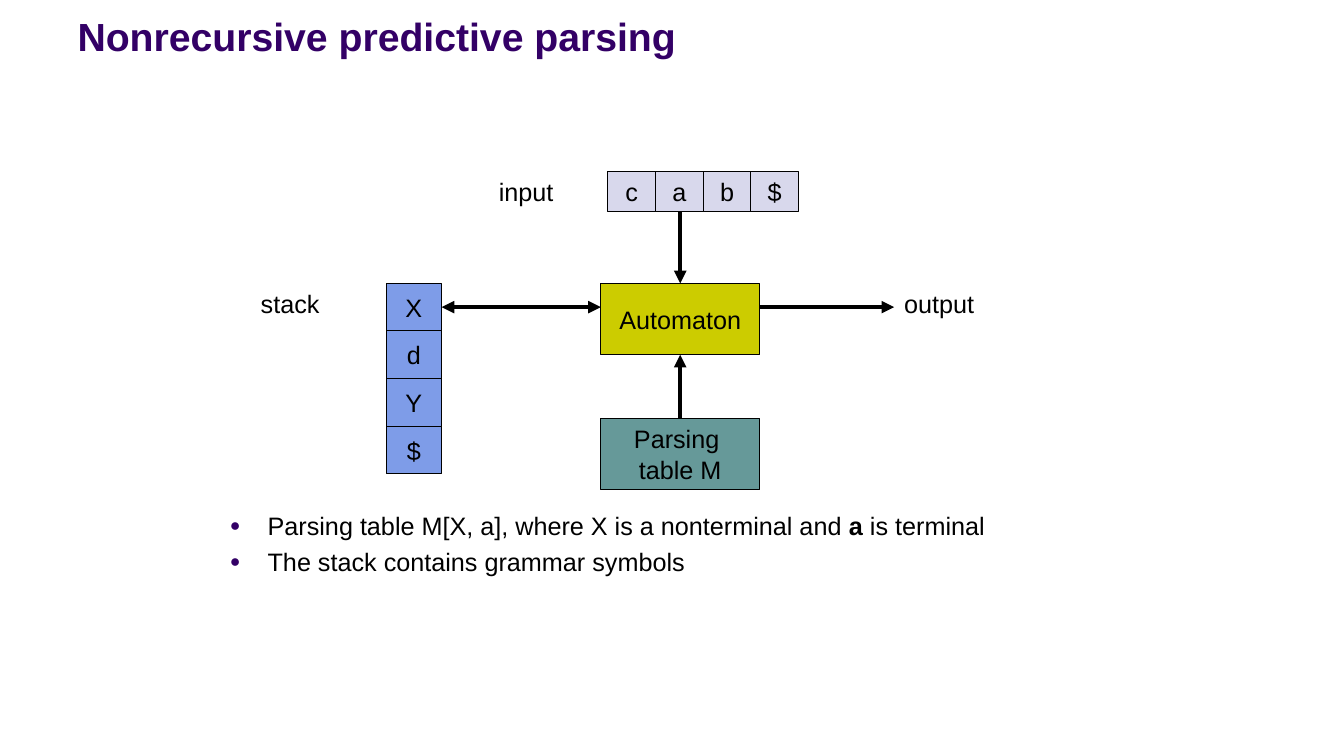
from lxml import etree
from pptx import Presentation
from pptx import util as u
from pptx.dml.color import RGBColor
from pptx.enum import shapes, text
from pptx.oxml import ns

BLACK = RGBColor(0x00, 0x00, 0x00)
PURPLE = RGBColor(0x33, 0x00, 0x66)
OLIVE = RGBColor(0xCC, 0xCC, 0x00)
TEAL = RGBColor(0x66, 0x99, 0x99)
LAVENDER = RGBColor(0xD8, 0xD8, 0xEC)
BLUE = RGBColor(0x7E, 0x9C, 0xE8)
CELL = 1.2
STACK_LEFT, STACK_WIDTH = 9.73, 1.4
BOX_LEFT, BOX_WIDTH, BOX_HEIGHT = 15.14, 4, 1.8
INPUT_LEFT, INPUT_TOP, INPUT_HEIGHT = 15.32, 4.32, 1
AUTOMATON_TOP, TABLE_TOP = 7.14, 10.54
OUTPUT_LEFT = 22.53


def add_text(p, content, size=18, color=BLACK, bold=False, align=text.PP_ALIGN.LEFT):
    p.alignment = align
    for i, line in enumerate(content.split("\n")):
        if i:
            p.add_line_break()
        r = p.add_run()
        r.text = line
        r.font.name = "Arial"
        r.font.size = u.Pt(size)
        r.font.bold = bold
        r.font.color.rgb = color


prs = Presentation()
prs.slide_width, prs.slide_height = u.Inches(13.333), u.Inches(7.5)
s = prs.slides.add_slide(prs.slide_layouts[1])

title, body = s.shapes.title, s.placeholders[1]
for sp, box, anchor in [
    (title, (1.7, 0.33, 30.48, 1.3), text.MSO_ANCHOR.BOTTOM),
    (body, (5.54, 12.73, 22.86, 4.6), text.MSO_ANCHOR.TOP),
]:
    sp.left, sp.top, sp.width, sp.height = map(u.Cm, box)
    sp.text_frame.auto_size = text.MSO_AUTO_SIZE.NONE
    sp.text_frame.vertical_anchor = anchor
add_text(title.text_frame.paragraphs[0], "Nonrecursive predictive parsing",
         size=28, color=PURPLE, bold=True)

bullets = [
    [("Parsing table M[X, a], where X is a nonterminal and ", False),
     ("a ", True), ("is terminal", False)],
    [("The stack contains grammar symbols", False)],
]
tf = body.text_frame
for i, runs in enumerate(bullets):
    p = tf.add_paragraph() if i else tf.paragraphs[0]
    for content, bold in runs:
        add_text(p, content, bold=bold)
    p.space_before = u.Pt(4)
    pPr = p._p.get_or_add_pPr()
    pPr.set("marL", str(u.Cm(0.95)))
    pPr.set("indent", str(u.Cm(-0.95)))
    color = etree.SubElement(pPr, ns.qn("a:buClr"))
    etree.SubElement(color, ns.qn("a:srgbClr"), val=str(PURPLE))
    etree.SubElement(pPr, ns.qn("a:buSzPct"), val="70000")
    etree.SubElement(pPr, ns.qn("a:buFont"), typeface="Arial")
    etree.SubElement(pPr, ns.qn("a:buChar"), char="●")

boxes = [
    ("Automaton", BOX_LEFT, AUTOMATON_TOP, BOX_WIDTH, BOX_HEIGHT, OLIVE),
    ("Parsing \ntable M", BOX_LEFT, TABLE_TOP, BOX_WIDTH, BOX_HEIGHT, TEAL),
]
for i, symbol in enumerate("cab$"):
    boxes.append((symbol, INPUT_LEFT + i * CELL, INPUT_TOP, CELL, INPUT_HEIGHT, LAVENDER))
for i, symbol in enumerate("XdY$"):
    boxes.append((symbol, STACK_LEFT, AUTOMATON_TOP + i * CELL, STACK_WIDTH, CELL, BLUE))
for content, left, top, width, height, fill in boxes:
    sp = s.shapes.add_shape(shapes.MSO_SHAPE.RECTANGLE,
                            u.Cm(left), u.Cm(top), u.Cm(width), u.Cm(height))
    sp.shadow.inherit = False
    sp.fill.solid()
    sp.fill.fore_color.rgb = fill
    sp.line.color.rgb = BLACK
    sp.line.width = u.Pt(0.75)
    tf = sp.text_frame
    tf.word_wrap = False
    tf.vertical_anchor = text.MSO_ANCHOR.MIDDLE
    add_text(tf.paragraphs[0], content, align=text.PP_ALIGN.CENTER)

mid_x = BOX_LEFT + BOX_WIDTH / 2
mid_y = AUTOMATON_TOP + CELL / 2
arrows = [
    (mid_x, TABLE_TOP, mid_x, AUTOMATON_TOP + BOX_HEIGHT, ["tailEnd"]),
    (mid_x, INPUT_TOP + INPUT_HEIGHT, mid_x, AUTOMATON_TOP, ["tailEnd"]),
    (BOX_LEFT, mid_y, STACK_LEFT + STACK_WIDTH, mid_y, ["headEnd", "tailEnd"]),
    (BOX_LEFT + BOX_WIDTH, mid_y, OUTPUT_LEFT, mid_y, ["tailEnd"]),
]
for x1, y1, x2, y2, ends in arrows:
    arrow = s.shapes.add_connector(shapes.MSO_CONNECTOR.STRAIGHT,
                                   u.Cm(x1), u.Cm(y1), u.Cm(x2), u.Cm(y2))
    arrow.line.color.rgb = BLACK
    arrow.line.width = u.Pt(3)
    for end in ends:
        etree.SubElement(arrow.line._get_or_add_ln(), ns.qn("a:" + end), type="triangle")
    etree.SubElement(arrow._element.spPr, ns.qn("a:effectLst"))

for content, left, top, width in [
    ("output", OUTPUT_LEFT, AUTOMATON_TOP, 2.29),
    ("input", 12.32, INPUT_TOP, 1.9),
    ("stack", 6.32, AUTOMATON_TOP, 2),
]:
    sp = s.shapes.add_textbox(u.Cm(left), u.Cm(top), u.Cm(width), u.Cm(1.02))
    tf = sp.text_frame
    tf.word_wrap = False
    tf.auto_size = text.MSO_AUTO_SIZE.SHAPE_TO_FIT_TEXT
    add_text(tf.paragraphs[0], content)

prs.save("out.pptx")
